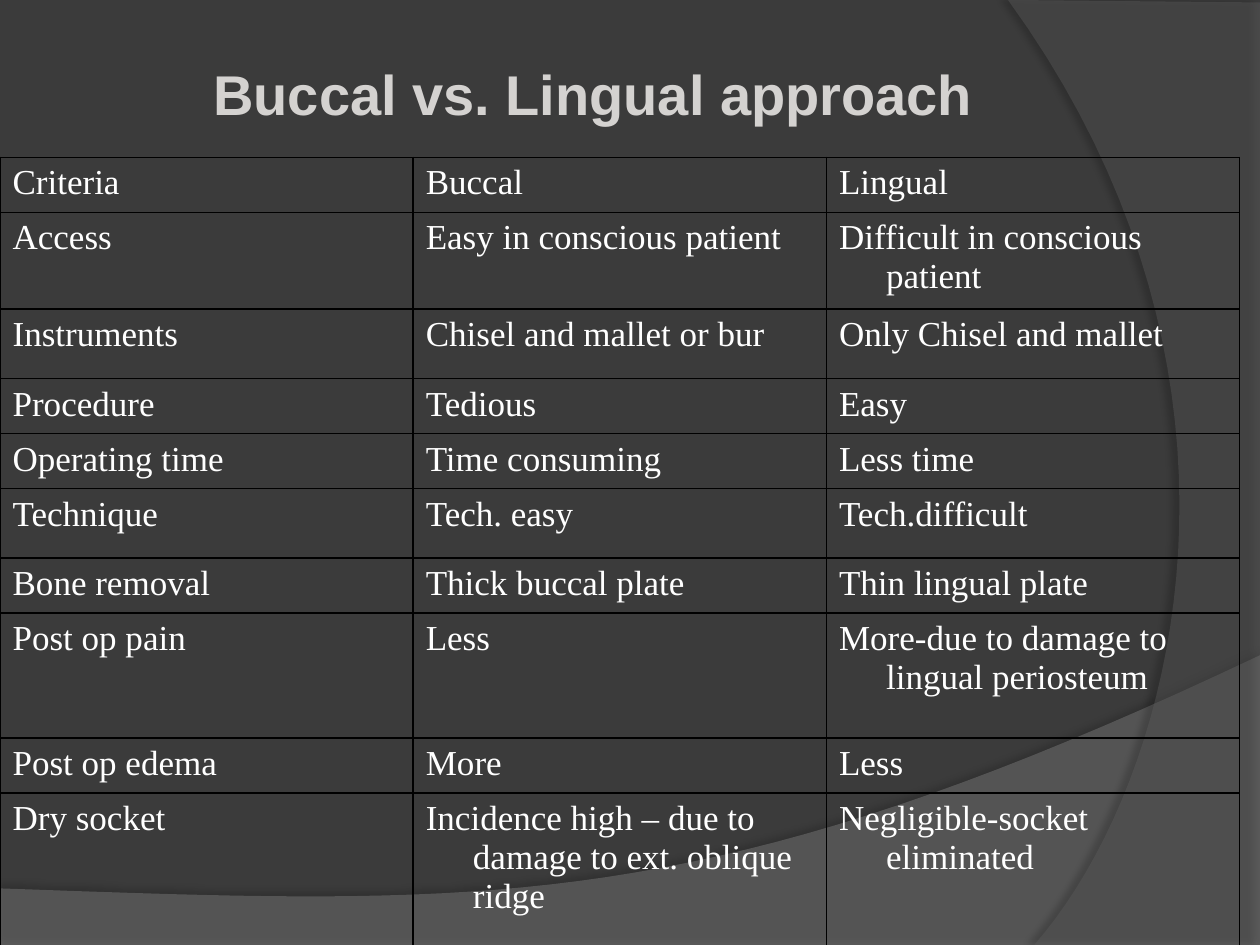
from lxml.etree import SubElement
from pptx import Presentation
from pptx.dml.color import RGBColor
from pptx.enum.text import MSO_AUTO_SIZE as AutoSize, PP_ALIGN as Align
from pptx.oxml import parse_xml
from pptx.oxml.ns import nsdecls, qn
from pptx.util import Cm, Pt

CURVE_STEPS = 40
COLUMN_WIDTH = 8.33
ROW_HEIGHTS = [1.11, 1.95, 1.4, 1.11, 1.11, 1.4, 1.11, 2.52, 1.11, 3.08]
ROWS = [
    ("Criteria", "Buccal", "Lingual"),
    ("Access", "Easy in conscious patient", "Difficult in conscious patient"),
    ("Instruments", "Chisel and mallet or bur", "Only Chisel and mallet"),
    ("Procedure", "Tedious", "Easy"),
    ("Operating time", "Time consuming", "Less time"),
    ("Technique", "Tech. easy", "Tech.difficult"),
    ("Bone removal", "Thick buccal plate", "Thin lingual plate"),
    ("Post op pain", "Less", "More-due to damage to lingual periosteum"),
    ("Post op edema", "More", "Less"),
    ("Dry socket", "Incidence high – due to damage to ext. oblique ridge",
     "Negligible-socket eliminated"),
]
CELL_FONT = {"name": "Times New Roman", "size": Pt(20), "bold": False}
TITLE_FONT = {"name": "Arial", "size": Pt(32), "bold": True}


def paint(color_format, color):
    color_format.rgb = RGBColor.from_string(color)


def format_font(font, values, color):
    for name, value in values.items():
        setattr(font, name, value)
    paint(font.color, color)


def bezier(start, control1, control2, end):
    """Return points along a cubic curve, without its start."""
    points = []
    for step in range(1, CURVE_STEPS + 1):
        t = step / CURVE_STEPS
        weights = ((1 - t) ** 3, 3 * t * (1 - t) ** 2, 3 * t * t * (1 - t), t ** 3)
        points.append(tuple(
            sum(weight * value for weight, value in zip(weights, values))
            for values in zip(start, control1, control2, end)))
    return points


def add_shadow(shape, opacity, distance, direction):
    shape.shadow.inherit = False
    effects = shape._element.spPr.find(qn("a:effectLst"))
    shadow = SubElement(effects, qn("a:outerShdw"), blurRad=str(Pt(4)),
                        dist=str(Pt(distance)), dir=str(direction * 60000))
    color = SubElement(shadow, qn("a:srgbClr"), val="000000")
    SubElement(color, qn("a:alpha"), val=str(opacity * 1000))


def add_wave(slide, corners, curve, color, opacity):
    """Draw straight corners closed by one curve from the last corner."""
    points = [(Cm(x), Cm(y)) for x, y in corners + bezier(corners[-1], *curve)]
    builder = slide.shapes.build_freeform(*points[0])
    builder.add_line_segments(points[1:], close=True)
    shape = builder.convert_to_shape()
    shape.fill.solid()
    paint(shape.fill.fore_color, color)
    fill_color = shape._element.spPr.find(qn("a:solidFill"))[0]
    SubElement(fill_color, qn("a:alpha"), val=str(opacity * 1000))
    shape.line.fill.background()
    return shape


def add_borders(cell, color):
    properties = cell._tc.get_or_add_tcPr()
    for index, side in enumerate(("lnL", "lnR", "lnT", "lnB")):
        properties.insert(index, parse_xml(
            f'<a:{side} {nsdecls("a")} w="{Pt(1)}"><a:solidFill>'
            f'<a:srgbClr val="{color}"/></a:solidFill></a:{side}>'))


def fill_cell(cell, text):
    cell.fill.background()
    add_borders(cell, "000000")
    paragraph = cell.text_frame.paragraphs[0]
    indent = Cm(0.95)
    properties = paragraph._p.get_or_add_pPr()
    properties.set("marL", str(indent))
    properties.set("indent", str(-indent))
    run = paragraph.add_run()
    run.text = text
    format_font(run.font, CELL_FONT, "FFFFFF")


def add_comparison_table(slide):
    columns = len(ROWS[0])
    table = slide.shapes.add_table(
        len(ROWS), columns, Cm(0), Cm(3.17),
        Cm(COLUMN_WIDTH * columns), Cm(sum(ROW_HEIGHTS))).table
    table.first_row = table.horz_banding = False
    for column in table.columns:
        column.width = Cm(COLUMN_WIDTH)
    for row, height, texts in zip(table.rows, ROW_HEIGHTS, ROWS):
        row.height = Cm(height)
        for cell, text in zip(row.cells, texts):
            fill_cell(cell, text)


def add_title(slide, text):
    frame = slide.shapes.add_textbox(Cm(0), Cm(1.07), Cm(23.93), Cm(1.6)).text_frame
    frame.word_wrap = True
    frame.auto_size = AutoSize.SHAPE_TO_FIT_TEXT
    paragraph = frame.paragraphs[0]
    paragraph.alignment = Align.CENTER
    run = paragraph.add_run()
    run.text = text
    format_font(run.font, TITLE_FONT, "D4D2D0")


def main():
    presentation = Presentation()
    presentation.slide_width, presentation.slide_height = Cm(25.4), Cm(19.05)
    slide = presentation.slides.add_slide(presentation.slide_layouts[6])
    slide.background.fill.solid()
    paint(slide.background.fill.fore_color, "3B3B3B")

    bottom_wave = add_wave(
        slide, [(0, 17.91), (0, 19.08), (25.4, 19.08), (25.4, 13.21)],
        [(14.2, 18.52), (9.93, 18.26), (0, 17.91)], "7F7F7F", 45)
    add_shadow(bottom_wave, 35, 3.5, 270)
    right_wave = add_wave(
        slide, [(25.4, 0.05), (25.4, 19.05), (20.85, 19.05)],
        [(23.75, 15.72), (25.86, 7.62), (20.32, 0)], "5E5E5E", 40)
    add_shadow(right_wave, 45, 4, 180)

    add_comparison_table(slide)
    add_title(slide, "Buccal vs. Lingual approach")
    presentation.save("out.pptx")


if __name__ == "__main__":
    main()
